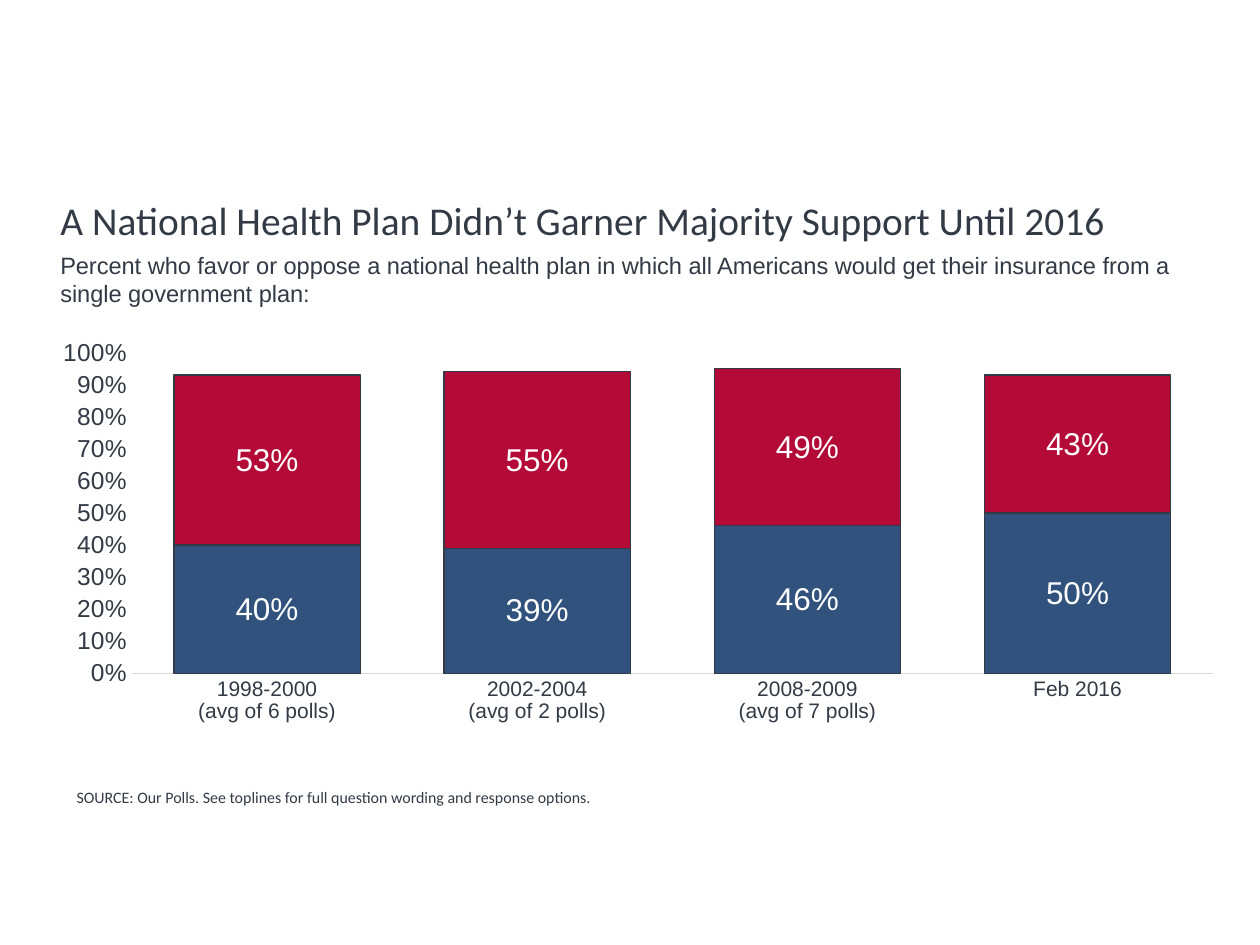
import pptx
import pptx.chart.data
import pptx.dml.color
import pptx.enum.chart
import pptx.enum.text
import pptx.oxml
import pptx.oxml.ns
import pptx.util

RGBColor = pptx.dml.color.RGBColor
Pt = pptx.util.Pt
ANCHOR = pptx.enum.text.MSO_ANCHOR
TICK = pptx.enum.chart.XL_TICK_MARK

INK = RGBColor(0x32, 0x3A, 0x45)
WHITE = RGBColor(0xFF, 0xFF, 0xFF)
NAVY = RGBColor(0x30, 0x52, 0x7C)
CRIMSON = RGBColor(0xB4, 0x0A, 0x37)
RULE = RGBColor(0xD9, 0xD9, 0xD9)

WIDTH, HEIGHT = pptx.util.Inches(10), pptx.util.Inches(7.5)
TITLE_BOX = (0.038, 0.19, 0.938, 0.092)
QUESTION_BOX = (0.038, 0.259, 0.925, 0.075)
CHART_BOX = (0.05, 0.319, 0.913, 0.492)
SOURCE_BOX = (0.051, 0.785, 0.753, 0.075)
PLOT_SHARE = {"x": 0.06, "y": 0.11, "w": 0.94, "h": 0.69}

PERIODS = ["1998-2000\n(avg of 6 polls)", "2002-2004\n(avg of 2 polls)",
           "2008-2009\n(avg of 7 polls)", "Feb 2016"]
ANSWERS = [("Favor", NAVY, (0.40, 0.39, 0.46, 0.50)),
           ("Oppose", CRIMSON, (0.53, 0.55, 0.49, 0.43))]


def to_emu(box):
    return [int(share * side) for share, side in zip(box, (WIDTH, HEIGHT) * 2)]


def apply(obj, values):
    for name, value in values.items():
        setattr(obj, name, value)


def style_font(font, size, color=INK, name="Arial"):
    apply(font, {"size": Pt(size), "name": name, "bold": False})
    font.color.rgb = color


def write(sp, box, text, size, name, anchor, spacing):
    apply(sp, dict(zip(("left", "top", "width", "height"), to_emu(box))))
    tf = sp.text_frame
    apply(tf, {"word_wrap": True, "vertical_anchor": anchor,
               "auto_size": pptx.enum.text.MSO_AUTO_SIZE.NONE})
    p = tf.paragraphs[0]
    apply(p, {"alignment": pptx.enum.text.PP_ALIGN.LEFT, "line_spacing": spacing})
    r = p.add_run()
    r.text = text
    style_font(r.font, size, name=name)


def add_text(s, box, *style):
    write(s.shapes.add_textbox(*to_emu(box)), box, *style)


def set_plot_area(chart):
    area = chart.element.find(".//" + pptx.oxml.ns.qn("c:plotArea"))
    for old in area.findall(pptx.oxml.ns.qn("c:layout")):
        area.remove(old)
    parts = "".join(f'<c:{k} val="{v}"/>' for k, v in PLOT_SHARE.items())
    area.insert(0, pptx.oxml.parse_xml(
        f'<c:layout {pptx.oxml.ns.nsdecls("c")}><c:manualLayout>'
        '<c:layoutTarget val="inner"/><c:xMode val="edge"/><c:yMode val="edge"/>'
        f'{parts}</c:manualLayout></c:layout>'))


def format_axes(chart):
    for axis, size in ((chart.category_axis, 12), (chart.value_axis, 14)):
        apply(axis, {"major_tick_mark": TICK.NONE, "minor_tick_mark": TICK.NONE,
                     "has_major_gridlines": False})
        style_font(axis.tick_labels.font, size)
    line = chart.category_axis.format.line
    line.color.rgb = RULE
    line.width = Pt(0.75)
    axis = chart.value_axis
    apply(axis, {"minimum_scale": 0, "maximum_scale": 1, "major_unit": 0.1})
    apply(axis.tick_labels, {"number_format": "0%", "number_format_is_linked": False})
    axis.format.line.fill.background()


def add_poll_chart(s, box):
    data = pptx.chart.data.CategoryChartData(number_format="0%")
    data.categories = PERIODS
    for name, _, shares in ANSWERS:
        data.add_series(name, shares)
    kind = pptx.enum.chart.XL_CHART_TYPE.COLUMN_STACKED
    chart = s.shapes.add_chart(kind, *to_emu(box), data).chart
    apply(chart, {"has_legend": False, "has_title": False})
    style_font(chart.font, 10)
    set_plot_area(chart)
    format_axes(chart)
    plot = chart.plots[0]
    apply(plot, {"gap_width": 45, "overlap": 100, "vary_by_categories": False})
    for series, (_, color, _) in zip(plot.series, ANSWERS):
        series.format.fill.solid()
        series.format.fill.fore_color.rgb = color
        series.format.line.color.rgb = INK
        series.format.line.width = Pt(0.75)
        labels = series.data_labels
        apply(labels, {"show_value": True, "number_format": "0%",
                       "number_format_is_linked": False,
                       "position": pptx.enum.chart.XL_LABEL_POSITION.CENTER})
        style_font(labels.font, 18, WHITE)


def main():
    prs = pptx.Presentation()
    apply(prs, {"slide_width": WIDTH, "slide_height": HEIGHT})
    s = prs.slides.add_slide(prs.slide_layouts[5])
    write(s.shapes.title, TITLE_BOX,
          "A National Health Plan Didn’t Garner Majority Support Until 2016",
          22.5, "Calibri", ANCHOR.MIDDLE, 0.9)
    add_text(s, SOURCE_BOX,
             "SOURCE: Our Polls. See toplines for full question wording and response options.",
             9.1, "Calibri", ANCHOR.BOTTOM, 0.7)
    add_text(s, QUESTION_BOX,
             "Percent who favor or oppose a national health plan in which all Americans "
             "would get their insurance from a single government plan:",
             13.5, "Arial", ANCHOR.TOP, 1.0)
    add_poll_chart(s, CHART_BOX)
    prs.save("out.pptx")


if __name__ == "__main__":
    main()
